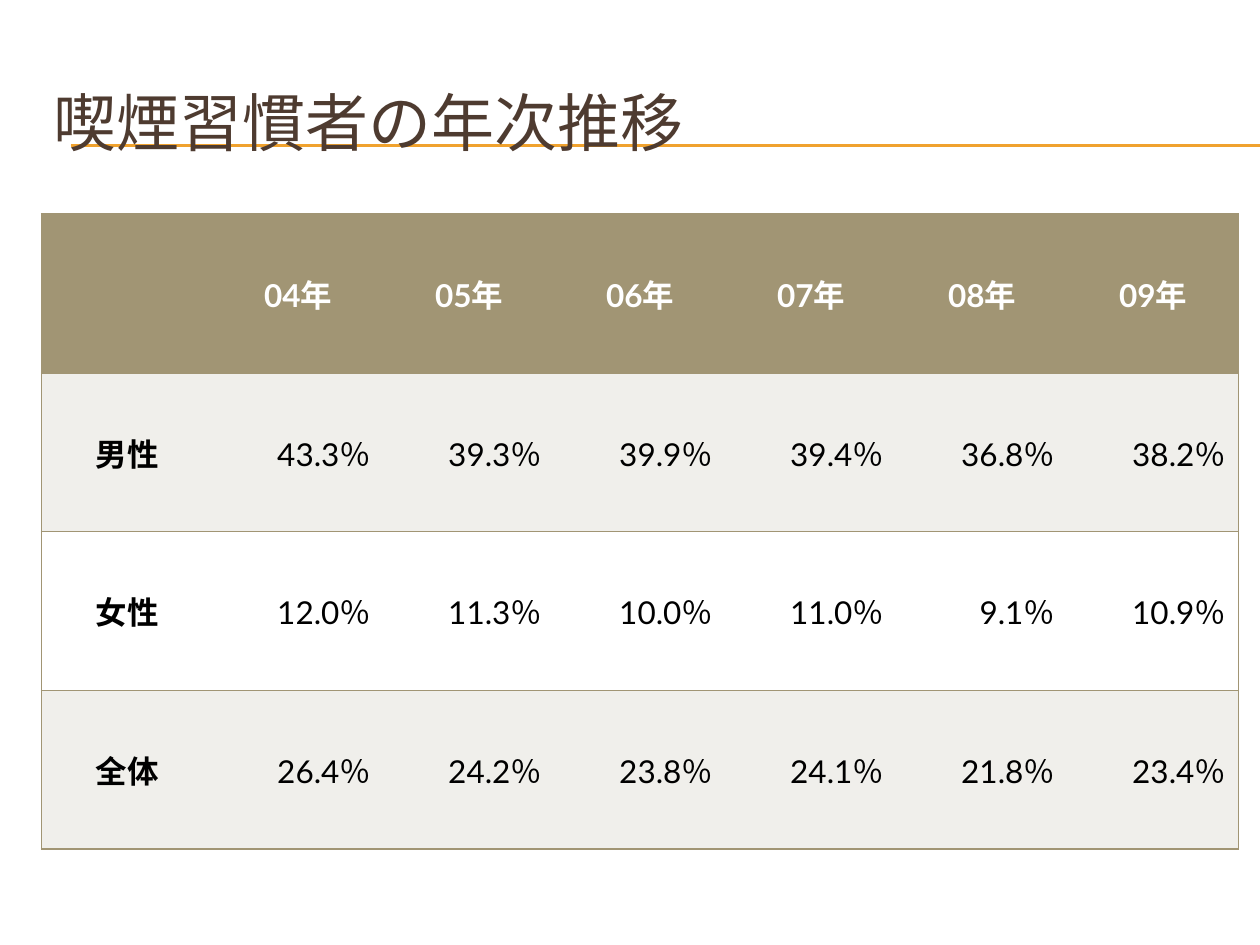
from lxml.etree import SubElement
from pptx import Presentation
from pptx.dml.color import RGBColor
from pptx.enum.shapes import MSO_CONNECTOR
from pptx.enum.text import MSO_ANCHOR as Anchor, PP_ALIGN as Align
from pptx.oxml import parse_xml
from pptx.oxml.ns import nsdecls, qn
from pptx.util import Inches, Pt

ORANGE = RGBColor(0xF0, 0xA2, 0x2E)
BROWN = RGBColor(0x4E, 0x3B, 0x30)
KHAKI = RGBColor(0xA1, 0x95, 0x74)
PALE = RGBColor(0xF0, 0xEF, 0xEB)
WHITE = RGBColor(0xFF, 0xFF, 0xFF)
BLACK = RGBColor(0, 0, 0)
FONT = "Lato"
PLAIN_TABLE = "{2D5ABB26-0587-4C30-8999-92F81FD0307C}"

RATES = {
    "男性": [43.3, 39.3, 39.9, 39.4, 36.8, 38.2],
    "女性": [12.0, 11.3, 10.0, 11.0, 9.1, 10.9],
    "全体": [26.4, 24.2, 23.8, 24.1, 21.8, 23.4],
}
ROWS = [[""] + [f"{year:02}年" for year in range(4, 10)]]
ROWS += [[group] + [f"{rate:.1f}％" for rate in rates] for group, rates in RATES.items()]


def write(para, text, **formats):
    span = para.add_run()
    span.text = text
    span.font.color.rgb = formats.pop("color")
    for name, value in {"name": FONT, **formats}.items():
        setattr(span.font, name, value)


def add_borders(cell, sides):
    """Draw 1 pt khaki lines on the given sides, in L, R, T, B order."""
    props = cell._tc.get_or_add_tcPr()
    for place, side in enumerate(sides):
        props.insert(place, parse_xml(
            f'<a:ln{side} {nsdecls("a")} w="{Pt(1)}"><a:solidFill>'
            f'<a:srgbClr val="{KHAKI}"/></a:solidFill></a:ln{side}>'))


deck = Presentation()
deck.slide_width, deck.slide_height = Inches(10), Inches(7.5)
page = deck.slides.add_slide(deck.slide_layouts[6])
left, width = Inches(0.33), Inches(9.5)

# Double rule under the title
for height in (1.15, 1.16):
    rule = page.shapes.add_connector(
        MSO_CONNECTOR.STRAIGHT, Inches(0.56), Inches(height), deck.slide_width, Inches(height))
    rule.line.color.rgb = ORANGE
    rule.line.width = Pt(0.75)
    SubElement(rule._element.spPr, qn("a:effectLst"))

title = page.shapes.add_textbox(left, Inches(0.5), width, Inches(0.92)).text_frame
title.word_wrap = True
title.vertical_anchor = Anchor.MIDDLE
write(title.paragraphs[0], "喫煙習慣者の年次推移", size=Pt(36), color=BROWN)

# Smoking rates by group and year
frame = page.shapes.add_table(len(ROWS), len(ROWS[0]), left, Inches(1.7), width, Inches(5.04))
table = frame.table
table._tbl.tblPr.find(qn("a:tableStyleId")).text = PLAIN_TABLE
table.horz_banding = False
last = len(ROWS[0]) - 1
for r, row in enumerate(ROWS):
    for c, text in enumerate(row):
        cell = table.cell(r, c)
        heading = r == 0 or c == 0
        cell.vertical_anchor = Anchor.MIDDLE
        cell.fill.solid()
        cell.fill.fore_color.rgb = KHAKI if r == 0 else PALE if r % 2 else WHITE
        add_borders(cell, {0: "LTB", last: "RTB"}.get(c, "TB"))
        if text:
            para = cell.text_frame.paragraphs[0]
            para.alignment = Align.CENTER if heading else Align.RIGHT
            write(para, text, size=Pt(18), bold=heading, color=BLACK if r else WHITE)

deck.save("out.pptx")
